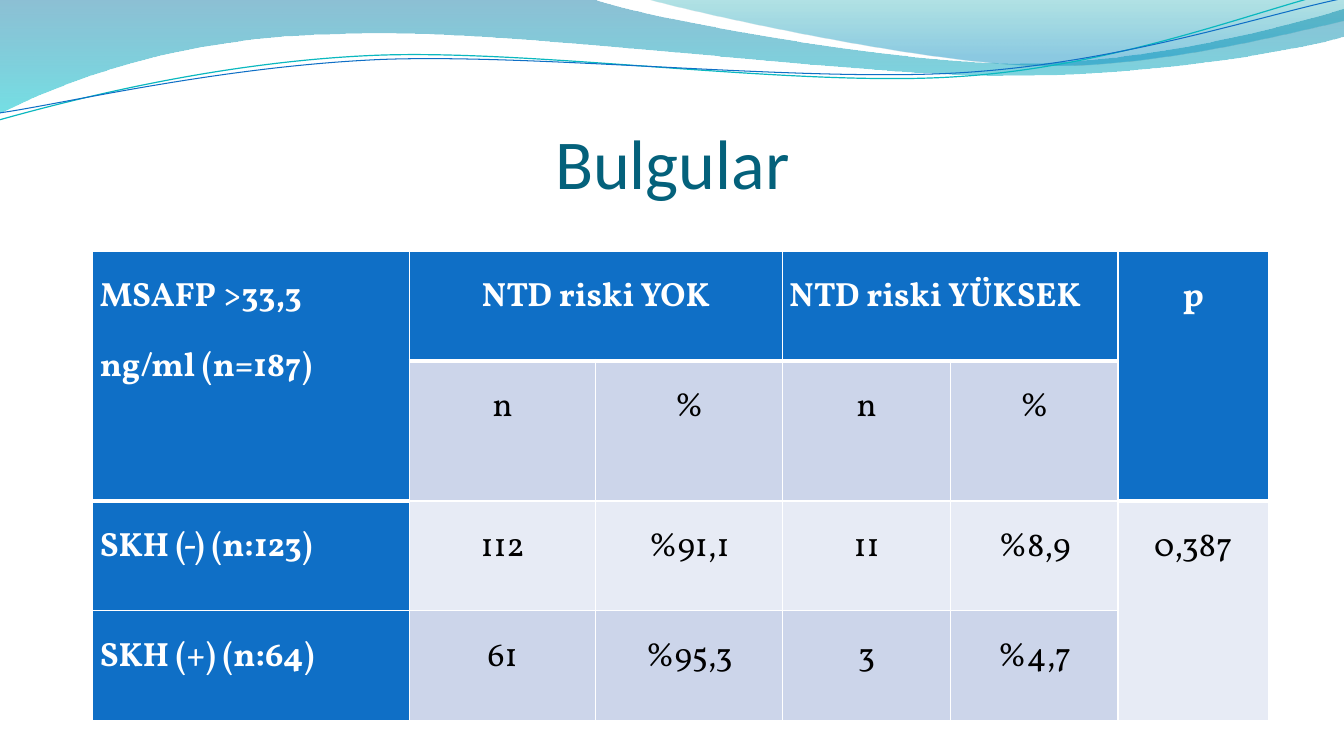
from dataclasses import dataclass
from math import cos, radians, sin

from lxml.etree import SubElement
from pptx import Presentation
from pptx.dml.color import RGBColor
from pptx.enum.text import MSO_ANCHOR, PP_ALIGN
from pptx.oxml.ns import qn
from pptx.util import Inches, Pt

Point = tuple[float, float]
Segment = tuple[Point, ...]  # one point: straight line; three points: Bézier curve
UNITS_PER_INCH = 1000


@dataclass(frozen=True)
class Theme:
    title_font: str = "Calibri"
    table_font: str = "Vollkorn"
    title_size: float = 50
    table_size: float = 24
    title: str = "04617B"
    header: str = "0F6FC6"
    band_dark: str = "CCD5EA"
    band_light: str = "E7EBF5"
    white: str = "FFFFFF"
    black: str = "000000"
    teal_line: str = "0AB8BF"


THEME = Theme()


@dataclass(frozen=True)
class Stop:
    position: float
    color: str
    opacity: int


@dataclass(frozen=True)
class Wave:
    start: Point
    segments: tuple[Segment, ...]
    stops: tuple[Stop, ...] = ()
    line_color: str = ""
    line_width: float = 0
    center: Point = (0, 0)
    rotation: float = 0


WAVES = (
    Wave((0, 0), (
        ((5.87, -0.01),),
        ((6.34, 0.17), (8.85, 0.63), (10.11, 0.63)),
        ((11.38, 0.63), (12.78, 0.26), (13.33, 0.09)),
        ((13.35, 0.36),),
        ((13.11, 0.44), (11.6, 0.76), (9.94, 0.75)),
        ((8.29, 0.75), (5.09, 0.28), (3.43, 0.34)),
        ((1.72, 0.36), (0.61, 0.83), (-0.01, 1.13)),
        ((0, 0),),
    ), stops=(Stop(0, "0074A1", 45), Stop(1, "00C6CF", 55))),
    Wave((6.39, -0.01), (
        ((6.79, 0.11), (9.09, 0.62), (10.25, 0.65)),
        ((11.41, 0.69), (12.82, 0.32), (13.33, 0.21)),
        ((13.33, 0),),
        ((6.39, -0.01),),
    ), stops=(Stop(0, "00A1A9", 30), Stop(0.8, "008BBF", 45))),
    Wave((-0.01, 1.19), (
        ((0.64, 1.01), (2.11, 0.62), (3.69, 0.55)),
        ((5.27, 0.48), (7.9, 0.87), (9.5, 0.76)),
        ((11.1, 0.66), (12.52, 0.08), (13.31, -0.1)),
    ), line_color=THEME.teal_line, line_width=0.85, center=(6.65, 0.58), rotation=-2.7),
    Wave((0, 1.12), (
        ((0.63, 1.03), (2.18, 0.66), (3.78, 0.59)),
        ((5.37, 0.53), (7.96, 0.82), (9.55, 0.72)),
        ((11.15, 0.62), (12.55, 0.14), (13.34, -0.02)),
    ), line_color=THEME.header, line_width=0.75, center=(6.67, 0.59), rotation=-2.7),
)

COLUMN_WIDTHS = (3.14, 1.85, 1.85, 1.67, 1.66, 1.49)
ROW_HEIGHTS = (1.09, 1.39, 1.09, 1.09)
CELL_TEXTS = (
    ("MSAFP >33,3 ng/ml (n=187)", "NTD riski YOK", "", "NTD riski YÜKSEK", "", "p"),
    ("", "n", "%", "n", "%", ""),
    ("SKH (-) (n:123)", "112", "%91,1", "11", "%8,9", "0,387"),
    ("SKH (+) (n:64)", "61", "%95,3", "3", "%4,7", ""),
)
MERGES = (((0, 0), (1, 0)), ((0, 1), (0, 2)), ((0, 3), (0, 4)),
          ((0, 5), (1, 5)), ((2, 5), (3, 5)))


def color_of(code: str) -> RGBColor:
    return RGBColor.from_string(code)


def local_point(point: Point, wave: Wave) -> Point:
    """Turn a point back, so that the shape's own rotation brings it into place."""
    angle = radians(-wave.rotation)
    dx, dy = point[0] - wave.center[0], point[1] - wave.center[1]
    return (UNITS_PER_INCH * (wave.center[0] + dx * cos(angle) - dy * sin(angle)),
            UNITS_PER_INCH * (wave.center[1] + dx * sin(angle) + dy * cos(angle)))


def bend_segments(shape, segments: tuple[Segment, ...]) -> None:
    """Join each three straight steps that hold a curve's points into one curve."""
    steps = iter(list(shape._element.iter(qn("a:lnTo"))))
    for segment in segments:
        group = [next(steps) for _ in segment]
        if len(group) == 3:
            curve = group[0].makeelement(qn("a:cubicBezTo"))
            group[0].addprevious(curve)
            for step in group:
                curve.append(step[0])
                step.getparent().remove(step)


def add_wave(page, wave: Wave) -> None:
    points = [wave.start, *(point for segment in wave.segments for point in segment)]
    points = [local_point(point, wave) for point in points]
    builder = page.shapes.build_freeform(*points[0], scale=Inches(1) / UNITS_PER_INCH)
    builder.add_line_segments(points[1:], close=bool(wave.stops))
    shape = builder.convert_to_shape()
    bend_segments(shape, wave.segments)
    shape.shadow.inherit = False
    shape.rotation = wave.rotation
    if not wave.stops:
        shape.fill.background()
        shape.line.color.rgb = color_of(wave.line_color)
        shape.line.width = Pt(wave.line_width)
        return
    shape.line.fill.background()
    shape.fill.gradient()
    shape.fill.gradient_angle = 270
    for target, stop in zip(shape.fill.gradient_stops, wave.stops):
        target.position = stop.position
        target.color.rgb = color_of(stop.color)
    colors = shape._element.spPr.find(qn("a:gradFill")).iter(qn("a:srgbClr"))
    for color, stop in zip(list(colors), wave.stops):
        SubElement(color, qn("a:alpha"), val=str(stop.opacity * 1000))


def add_title(page, text: str) -> None:
    box = page.shapes.add_textbox(Inches(0.67), Inches(0.77), Inches(12), Inches(1.25))
    frame = box.text_frame
    frame.word_wrap = True
    frame.vertical_anchor = MSO_ANCHOR.BOTTOM
    frame.margin_left = frame.margin_right = frame.margin_bottom = 0
    para = frame.paragraphs[0]
    para.text = text
    para.alignment = PP_ALIGN.CENTER
    para.font.name = THEME.title_font
    para.font.size = Pt(THEME.title_size)
    para.font.color.rgb = color_of(THEME.title)


def add_border(cell, side: str, width: float) -> None:
    line = SubElement(cell._tc.get_or_add_tcPr(), qn(f"a:ln{side}"), w=str(Pt(width)))
    SubElement(SubElement(line, qn("a:solidFill")), qn("a:srgbClr"), val=THEME.white)


def style_cell(cell, row: int, column: int) -> None:
    text = CELL_TEXTS[row][column]
    is_header = row == 0 or column == 0 or (row, column) == (1, 5)
    for side in ("L", "R", "T") if row == 0 else ("L", "R"):
        add_border(cell, side, 1)
    add_border(cell, "B", 3 if is_header and row < 2 else 1)
    band = THEME.band_dark if row % 2 else THEME.band_light
    cell.fill.solid()
    cell.fill.fore_color.rgb = color_of(THEME.header if is_header else band)
    cell.margin_left = cell.margin_right = Inches(0.07)
    cell.margin_top = cell.margin_bottom = 0
    if not text:
        return
    para = cell.text_frame.paragraphs[0]
    para.text = text
    is_left = column == 0 or (row, column) == (0, 3)
    para.alignment = PP_ALIGN.LEFT if is_left else PP_ALIGN.CENTER
    para.line_spacing = 1.5
    para.font.name = THEME.table_font
    para.font.size = Pt(THEME.table_size)
    para.font.bold = is_header
    para.font.color.rgb = color_of(THEME.white if is_header else THEME.black)


def add_findings_table(page) -> None:
    table = page.shapes.add_table(
        len(ROW_HEIGHTS), len(COLUMN_WIDTHS), Inches(0.92), Inches(2.49),
        Inches(sum(COLUMN_WIDTHS)), Inches(sum(ROW_HEIGHTS))).table
    for column, width in zip(table.columns, COLUMN_WIDTHS):
        column.width = Inches(width)
    for row, height in zip(table.rows, ROW_HEIGHTS):
        row.height = Inches(height)
    for first, last in MERGES:
        table.cell(*first).merge(table.cell(*last))
    for row in range(len(ROW_HEIGHTS)):
        for column in range(len(COLUMN_WIDTHS)):
            style_cell(table.cell(row, column), row, column)


def main() -> None:
    deck = Presentation()
    deck.slide_width, deck.slide_height = Inches(13.33), Inches(7.5)
    page = deck.slides.add_slide(deck.slide_layouts[6])
    for wave in WAVES:
        add_wave(page, wave)
    add_title(page, "Bulgular")
    add_findings_table(page)
    deck.save("out.pptx")


if __name__ == "__main__":
    main()
